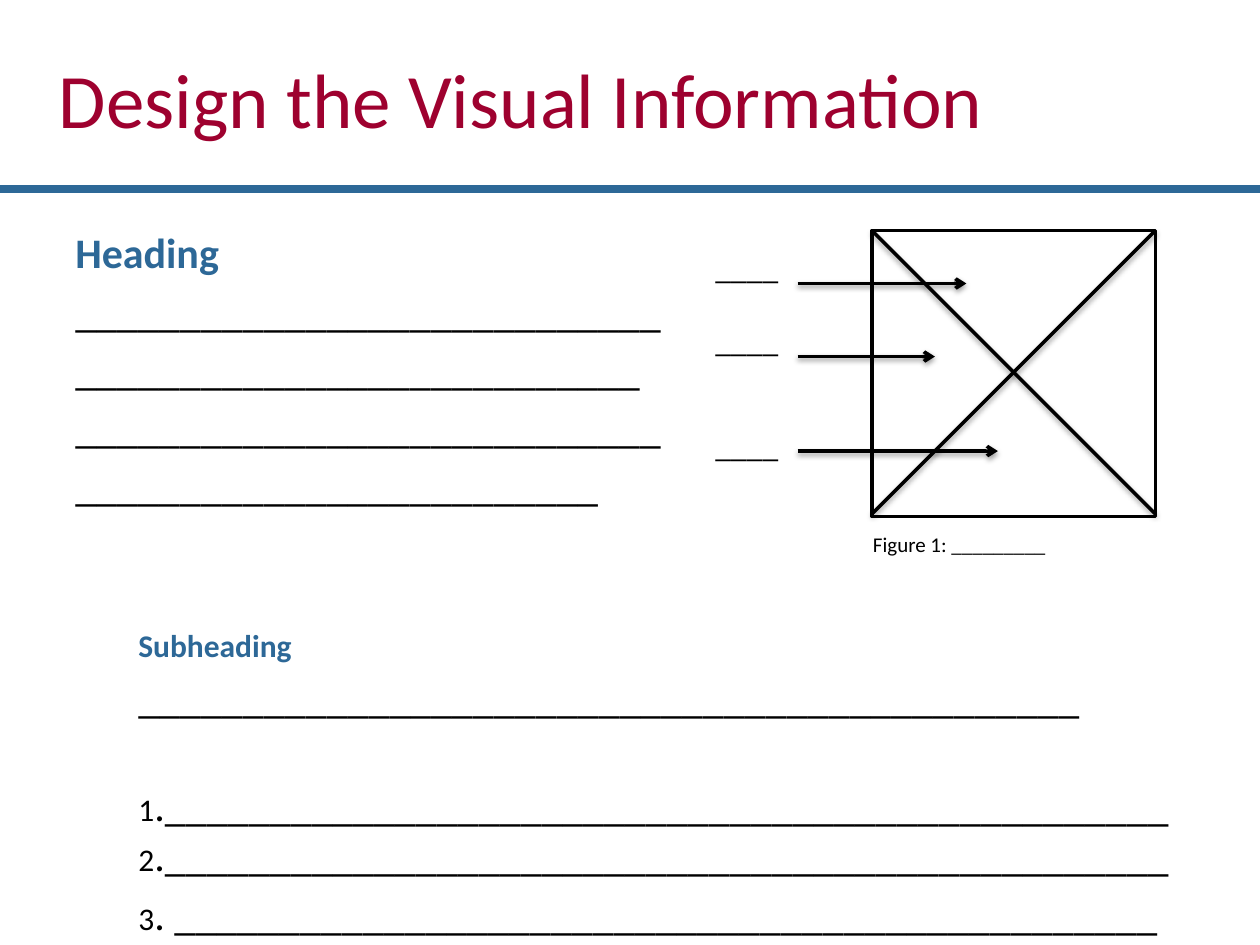
"""Build the "Design the Visual Information" layout slide."""
from lxml import etree
from pptx import Presentation
from pptx.dml.color import RGBColor
from pptx.enum.shapes import MSO_CONNECTOR, MSO_SHAPE
from pptx.enum.text import MSO_ANCHOR
from pptx.oxml.ns import qn
from pptx.util import Inches, Pt

STRAIGHT = MSO_CONNECTOR.STRAIGHT
RECTANGLE = MSO_SHAPE.RECTANGLE
MIDDLE = MSO_ANCHOR.MIDDLE
COLORS = {"blue": "2D6897", "red": "9E012F", "black": "000000", "white": "FFFFFF"}


def add_text(left, top, width, height, paragraphs):
    frame = slide.shapes.add_textbox(
        Inches(left), Inches(top), Inches(width), Inches(height)).text_frame
    frame.word_wrap = True
    for index, (runs, size, color, bold, indent, before) in enumerate(paragraphs):
        paragraph = frame.paragraphs[0] if index == 0 else frame.add_paragraph()
        paragraph.space_before = Pt(before)
        paragraph.font.name = "Calibri"
        paragraph.font.size = Pt(size)
        paragraph.font.bold = bold
        paragraph.font.color.rgb = RGBColor.from_string(COLORS[color])
        if indent:
            paragraph._p.get_or_add_pPr().set("marL", str(Inches(indent)))
        for text, run_size in runs:
            run = paragraph.add_run()
            run.text = text
            if run_size != size:
                run.font.size = Pt(run_size)
    return frame


def add_line(x1, y1, x2, y2, color="black", width=2, arrow=False, shadow=True):
    line = slide.shapes.add_connector(
        STRAIGHT, Inches(x1), Inches(y1), Inches(x2), Inches(y2))
    line.line.color.rgb = RGBColor.from_string(COLORS[color])
    line.line.width = Pt(width)
    if arrow:
        etree.SubElement(line.line._get_or_add_ln(), qn("a:tailEnd"), type="arrow")
    effects = etree.SubElement(line._element.spPr, qn("a:effectLst"))
    if shadow:
        outer = etree.SubElement(
            effects, qn("a:outerShdw"), blurRad=str(Pt(3.1)), dist=str(Pt(1.6)),
            dir="5400000", rotWithShape="0")
        tint = etree.SubElement(outer, qn("a:srgbClr"), val=COLORS["black"])
        etree.SubElement(tint, qn("a:alpha"), val="38000")


presentation = Presentation()
presentation.slide_width = Inches(10)
presentation.slide_height = Inches(7.5)
slide = presentation.slides.add_slide(presentation.slide_layouts[6])

GAP = 4.5
content = [([("Heading", 24)], 24, "blue", True, 0, GAP)]
for length in (28, 27, 28, 25):
    content.append(([("_" * length, 24)], 24, "black", False, 0, GAP))
content.append(([("Subheading", 18)], 18, "blue", True, 0.5, 66))
content.append(([("_" * 45, 24)], 24, "black", False, 0.5, GAP))
for number, rest, before in (
        ("1", "." + "_" * 48, 33), ("2", "." + "_" * 48, 0), ("3", ". " + "_" * 47, GAP)):
    content.append(([(number, 18), (rest, 24)], 24, "black", False, 0.5, before))
add_text(0.5, 1.75, 9, 5.42, content)

add_line(0, 1.5, 10, 1.5, color="blue", width=5, shadow=False)
title = add_text(0, 0, 10, 1.55, [
    ([("Design the Visual Information", 44)], 44, "red", False, 0.37, 0)])
title.vertical_anchor = MIDDLE

left, top, right, bottom = 6.92, 1.83, 9.17, 4.1
figure = slide.shapes.add_shape(
    RECTANGLE, Inches(left), Inches(top), Inches(right - left), Inches(bottom - top))
figure.shadow.inherit = False
figure.fill.solid()
figure.fill.fore_color.rgb = RGBColor.from_string(COLORS["white"])
figure.line.color.rgb = RGBColor.from_string(COLORS["black"])
figure.line.width = Pt(2)
add_line(left, top, right, 4.08)
add_line(left, 4.08, right, top)

for arrow_y, arrow_end, label_top in (
        (2.25, 7.67, 1.92), (2.83, 7.42, 2.5), (3.58, 7.92, 3.33)):
    add_line(6.33, arrow_y, arrow_end, arrow_y, arrow=True)
    add_text(5.58, label_top, 0.75, 0.4, [([("____", 18)], 18, "black", False, 0, 0)])

add_text(6.83, 4.17, 2.25, 0.3, [
    ([("Figure 1: _________", 12)], 12, "black", False, 0, 0)])

presentation.save("out.pptx")
